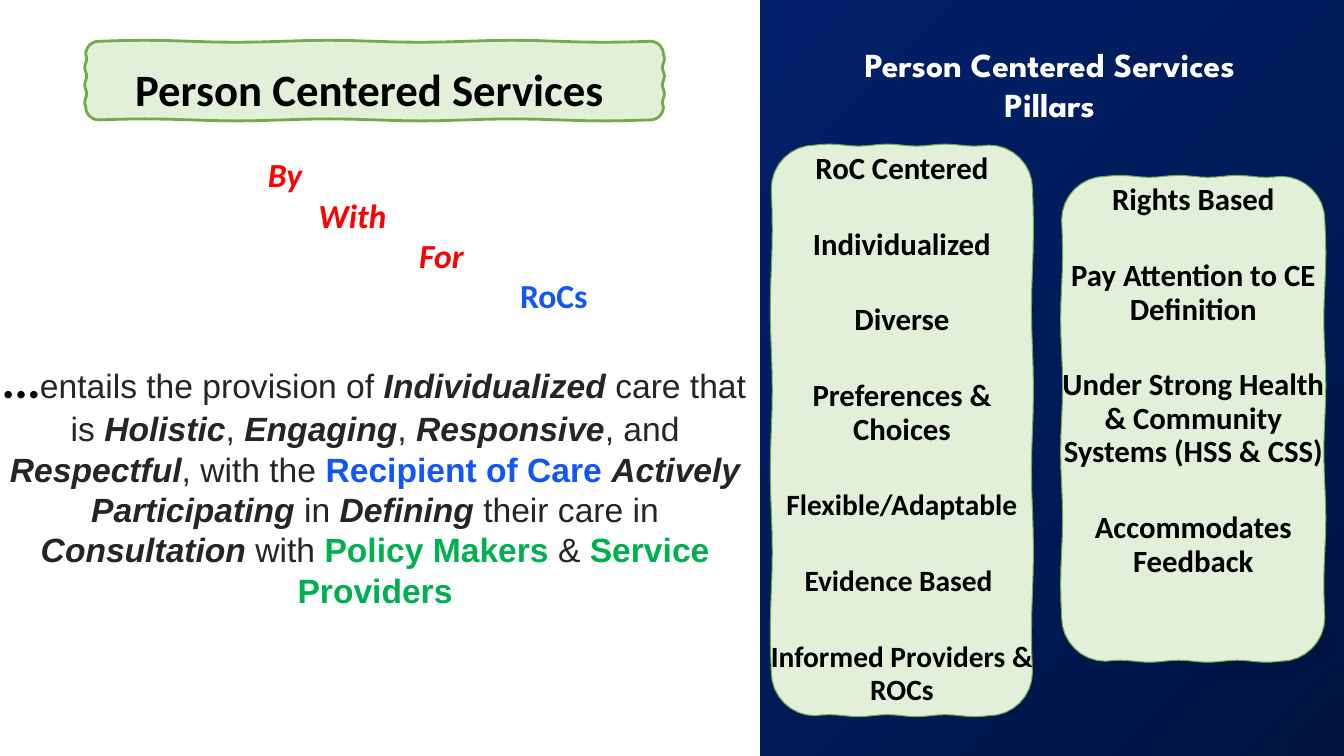
import math

from lxml import etree
from pptx import Presentation
from pptx.dml.color import RGBColor
from pptx.enum.shapes import MSO_SHAPE
from pptx.enum.text import MSO_ANCHOR, PP_ALIGN
from pptx.oxml import parse_xml
from pptx.util import Inches, Pt

CENTER, LEFT = PP_ALIGN.CENTER, PP_ALIGN.LEFT
TOP, MIDDLE, BOTTOM = MSO_ANCHOR.TOP, MSO_ANCHOR.MIDDLE, MSO_ANCHOR.BOTTOM
WHITE = RGBColor(0xFF, 0xFF, 0xFF)
BLACK = RGBColor(0x00, 0x00, 0x00)
CHARCOAL = RGBColor(0x25, 0x25, 0x25)
RED = RGBColor(0xFF, 0x00, 0x00)
BLUE = RGBColor(0x12, 0x56, 0xFA)
GREEN = RGBColor(0x00, 0xB0, 0x50)
PALE_GREEN = RGBColor(0xE2, 0xF0, 0xD9)
LEAF_GREEN = RGBColor(0x70, 0xAD, 0x47)
NAVY_GRADIENT = (
    '<a:gradFill xmlns:a="http://schemas.openxmlformats.org/drawingml/2006/main"><a:gsLst>'
    '<a:gs pos="0"><a:srgbClr val="00133F"/></a:gs>'
    '<a:gs pos="50000"><a:srgbClr val="001B5A"/></a:gs>'
    '<a:gs pos="100000"><a:srgbClr val="022069"/></a:gs></a:gsLst>'
    '<a:path path="circle"><a:fillToRect l="100000" t="100000"/></a:path></a:gradFill>'
)


def set_font(font, name, size, color, bold=True, italic=False):
    font.name, font.size, font.bold, font.italic = name, Pt(size), bold, italic
    font.color.rgb = color


def add_sketched_card(page, left, top, width, height, line_width):
    """Add a rounded card whose straight sides waver like a pen stroke."""
    radius, waver, steps = min(width, height) / 6, 0.01, 24
    points = []
    for corner in range(4):
        on_right, on_bottom = corner in (0, 1), corner in (1, 2)
        center_x = left + (width - radius if on_right else radius)
        center_y = top + (height - radius if on_bottom else radius)
        for step in range(9):
            angle = math.radians(90 * (corner - 1) + step * 90 / 8)
            points.append((center_x + radius * math.cos(angle),
                           center_y + radius * math.sin(angle)))
        side = (height if corner % 2 == 0 else width) - 2 * radius
        start_x, start_y = points[-1]
        along = math.radians(90 * (corner + 1))
        for step in range(1, steps):
            share = step / steps
            offset = waver * math.sin(6 * math.pi * share)
            points.append((
                start_x + side * share * math.cos(along) + offset * math.sin(along),
                start_y + side * share * math.sin(along) - offset * math.cos(along)))
    points = [(Inches(x), Inches(y)) for x, y in points]
    outline = page.shapes.build_freeform(*points[0])
    outline.add_line_segments(points[1:], close=True)
    card = outline.convert_to_shape()
    card.shadow.inherit = False
    card.fill.solid()
    card.fill.fore_color.rgb = PALE_GREEN
    card.line.color.rgb = LEAF_GREEN
    card.line.width = Pt(line_width)
    card.text_frame.word_wrap = True
    return card


deck = Presentation()
deck.slide_width, deck.slide_height = Inches(13.33), Inches(7.5)
page = deck.slides.add_slide(deck.slide_layouts[5])

# Navy side panel with the slide title on top
panel = page.shapes.add_shape(
    MSO_SHAPE.RECTANGLE, Inches(7.54), 0, Inches(5.79), deck.slide_height)
panel.shadow.inherit = False
panel.line.fill.background()
panel.fill.background()
properties = panel.element.spPr
no_fill = properties.find("{*}noFill")
properties.replace(no_fill, parse_xml(NAVY_GRADIENT))

title = page.shapes.title
title.element.getparent().append(title.element)
title.left, title.top = Inches(8.07), Inches(0.37)
title.width, title.height = Inches(4.77), Inches(0.93)
title.text_frame.text = "Person Centered Services \vPillars "
title.text_frame.vertical_anchor = MIDDLE
para = title.text_frame.paragraphs[0]
para.alignment = CENTER
set_font(para.font, "League Spartan", 24, WHITE)

# Two cards of pillars, each pillar with its text size
PILLARS = [
    ((7.65, 1.44, 2.59, 5.66),
     [("RoC Centered", 22), ("Individualized", 22), ("Diverse", 22),
      ("Preferences & Choices", 22), ("Flexible/Adaptable", 21),
      ("Evidence Based ", 21), ("Informed Providers & ROCs", 21)]),
    ((10.53, 1.75, 2.61, 4.81),
     [("Rights Based", 22), ("Pay Attention to CE Definition", 22),
      ("Under Strong Health & Community Systems (HSS & CSS)", 22),
      ("Accommodates Feedback", 22)]),
]
for place, pillars in PILLARS:
    frame = add_sketched_card(page, *place, line_width=0.75).text_frame
    frame.vertical_anchor = TOP
    frame.margin_left = frame.margin_right = frame.margin_bottom = 0
    frame.margin_top = Inches(0.08)
    frame.text = "\n".join(pillar for pillar, _ in pillars)
    for para, (_, size) in zip(frame.paragraphs, pillars):
        para.alignment = CENTER
        para.line_spacing, para.space_after = Pt(24), Pt(30)
        set_font(para.font, "Calibri", size, BLACK)

# Heading card on the left
frame = add_sketched_card(page, 0.85, 0.41, 5.73, 0.78, line_width=2).text_frame
frame.vertical_anchor = BOTTOM
frame.text = "Person Centered Services "
para = frame.paragraphs[0]
para.alignment, para.line_spacing = CENTER, Pt(22)
set_font(para.font, "Calibri", 32, BLACK)

# Definition
PLAIN, STRESSED = (CHARCOAL, False, False), (CHARCOAL, True, True)
RECIPIENT, PARTNER = (BLUE, True, False), (GREEN, True, False)
DEFINITION = [
    ("entails the provision of ", PLAIN), ("Individualized ", STRESSED),
    ("care that is ", PLAIN), ("Holistic", STRESSED), (", ", PLAIN),
    ("Engaging", STRESSED), (", ", PLAIN), ("Responsive", STRESSED),
    (", and ", PLAIN), ("Respectful", STRESSED), (", with the ", PLAIN),
    ("Recipient of Care ", RECIPIENT), ("Actively Participating ", STRESSED),
    ("in ", PLAIN), ("Defining ", STRESSED), ("their care in ", PLAIN),
    ("Consultation ", STRESSED), ("with ", PLAIN), ("Policy Makers ", PARTNER),
    ("& ", PLAIN), ("Service Providers", PARTNER),
]
box = page.shapes.add_textbox(Inches(-0.17), Inches(3.4), Inches(7.78), Inches(3.33))
box.text_frame.word_wrap = True
para = box.text_frame.paragraphs[0]
para.alignment = CENTER
span = para.add_run()
span.text = "…"
set_font(span.font, "Calibri", 36, BLACK, italic=True)
for words, style in DEFINITION:
    span = para.add_run()
    span.text = words
    set_font(span.font, "Arial", 24, *style)

# Stepped words: each one starts at a further half-inch tab
STEPS = [("By", 0, RED), ("With", 1, RED), ("For", 3, RED), ("RoCs", 5, BLUE)]
box = page.shapes.add_textbox(Inches(2.56), Inches(1.48), Inches(3.8), Inches(1.72))
frame = box.text_frame
frame.word_wrap = True
frame.text = "\n".join("\t" * tabs + word for word, tabs, _ in STEPS)
for para, (_, tabs, color) in zip(frame.paragraphs, STEPS):
    para.alignment = LEFT
    tab_list = etree.SubElement(
        para._p.get_or_add_pPr(),
        "{http://schemas.openxmlformats.org/drawingml/2006/main}tabLst")
    for stop in range(1, tabs + 1):
        etree.SubElement(tab_list, tab_list.tag.replace("tabLst", "tab"),
                         pos=str(Inches(0.5 * stop)), algn="l")
    set_font(para.font, "Calibri", 24, color, italic=color == RED)

deck.save("out.pptx")
